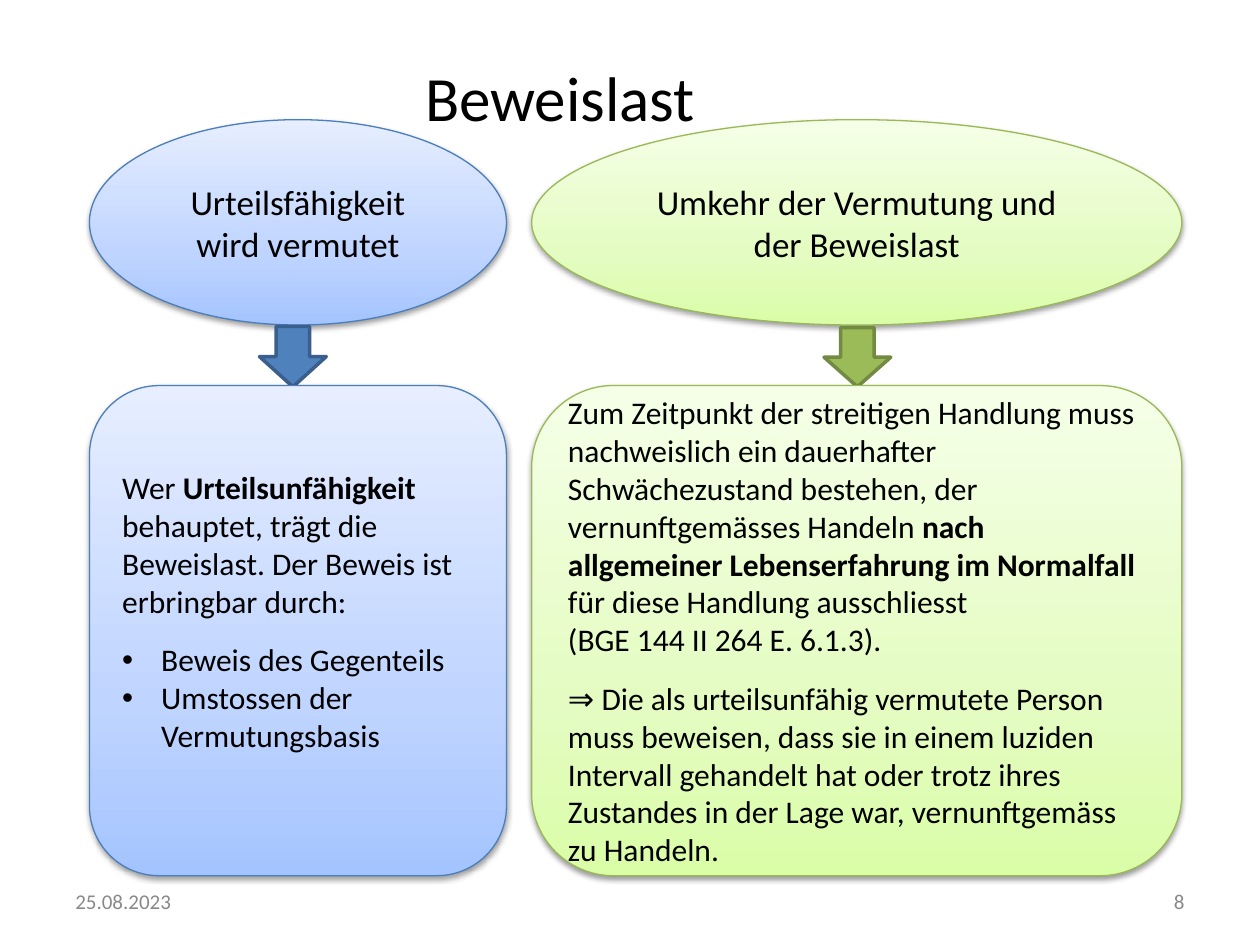
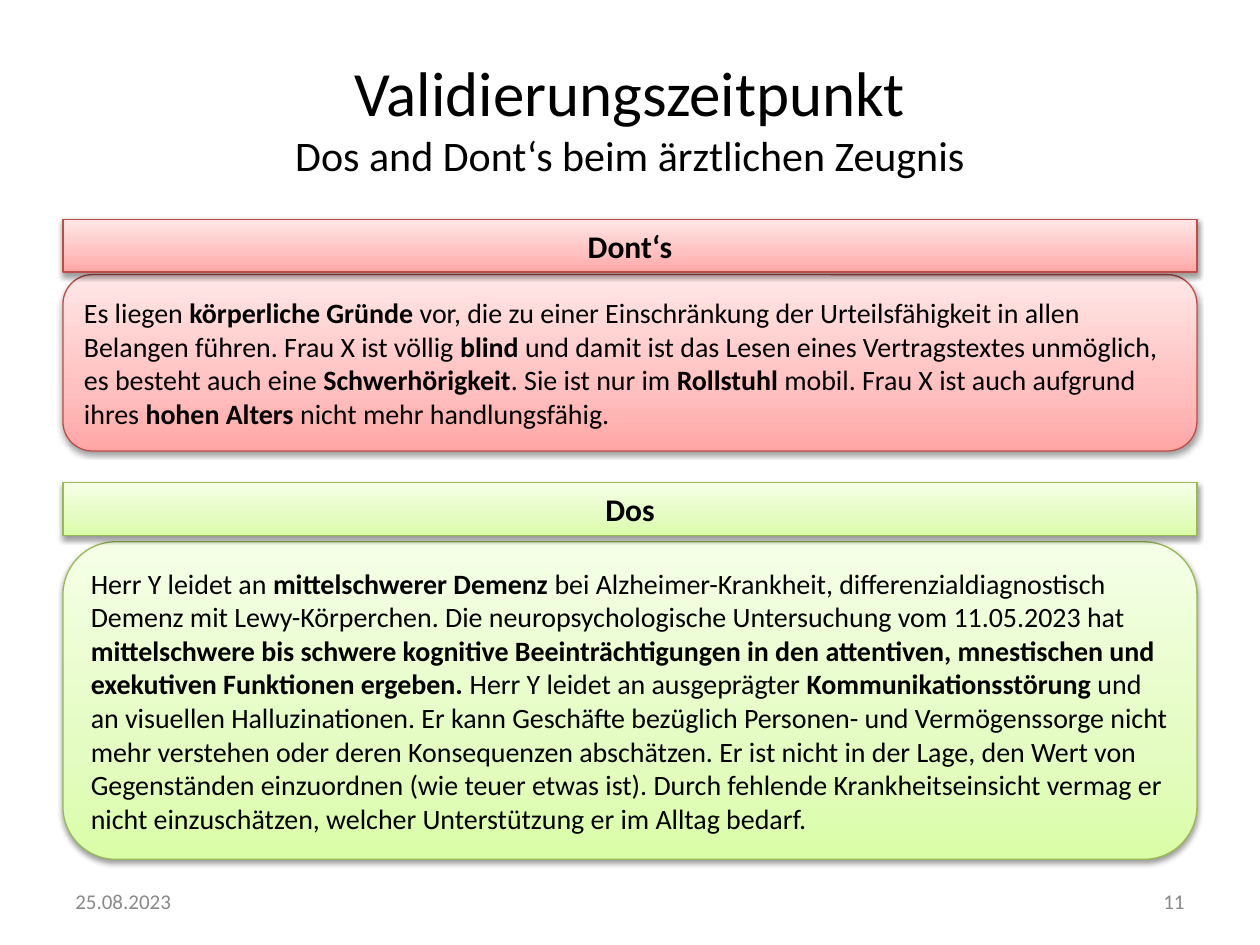
from lxml import etree
from pptx import Presentation
from pptx.dml.color import RGBColor
from pptx.enum import shapes, text
from pptx.oxml import ns
from pptx.util import Inches, Pt

SHAPE = shapes.MSO_SHAPE
ALIGN = text.PP_ALIGN
FONT = "Calibri"
BLACK, GREY = "000000", "898989"

# Each theme: panel gradient from bottom to top, then panel outline
BLUE = (("A4C4FF", "BFD4FF", "E6EEFF"), "4B7EBC")
GREEN = (("DAFDA7", "E4FCC2", "F5FFE7"), "98B955")
RED = (("FFA6A5", "FFC0BF", "FFE7E7"), "BF4C48")
STOPS = (0, 35, 100)


def rgb(value):
    return RGBColor.from_string(value)


def sub(parent, tag, **attrs):
    return etree.SubElement(parent, ns.qn(tag), attrs)


class Deck:
    def __init__(self):
        self.prs = Presentation()
        self.prs.slide_width, self.prs.slide_height = Inches(10), Inches(7.5)
        self.slide = None

    def new_slide(self, number, title, width, height, subtitle=None):
        self.slide = self.prs.slides.add_slide(self.prs.slide_layouts[5])
        sp = self.slide.shapes.title
        sp.left, sp.top = Inches(0.5), Inches(0.3)
        sp.width, sp.height = Inches(width), Inches(height)
        tf = sp.text_frame
        tf.vertical_anchor = text.MSO_ANCHOR.MIDDLE
        p = tf.paragraphs[0]
        p.alignment = ALIGN.CENTER
        self.run(p, title, 36)
        if subtitle:
            p.add_line_break()
            self.run(p, subtitle, 24)
        self.footer(0.5, "25.08.2023", ALIGN.LEFT)
        self.footer(7.17, str(number), ALIGN.RIGHT)

    def footer(self, left, content, align):
        sp = self.slide.shapes.add_textbox(
            Inches(left), Inches(6.95), Inches(2.33), Inches(0.4))
        self.frame(sp)
        self.paragraph(sp, content, 12, align, color=GREY)

    def run(self, p, content, size, bold=False, color=BLACK):
        r = p.add_run()
        r.text = content
        r.font.name, r.font.size, r.font.bold = FONT, Pt(size), bold
        r.font.color.rgb = rgb(color)

    def frame(self, sp):
        sp.text_frame.word_wrap = True
        sp.text_frame.vertical_anchor = text.MSO_ANCHOR.MIDDLE

    def paragraph(self, sp, content, size, align=ALIGN.LEFT, before=0,
                  bullet=False, color=BLACK):
        """Add a paragraph; ** toggles bold and a newline breaks the line."""
        tf = sp.text_frame
        p = tf.paragraphs[0] if not tf.text else tf.add_paragraph()
        p.alignment = align
        if before:
            p.space_before = Pt(before)
        if bullet:
            pPr = p._p.get_or_add_pPr()
            pPr.set("marL", str(Inches(0.31)))
            pPr.set("indent", str(-Inches(0.31)))
            sub(pPr, "a:buFont", typeface="Arial")
            sub(pPr, "a:buChar", char="•")
        for i, part in enumerate(content.split("**")):
            for j, line in enumerate(part.split("\n")):
                if j:
                    p.add_line_break()
                if line:
                    self.run(p, line, size, bold=i % 2 == 1, color=color)

    def shape(self, kind, left, top, width, height, line, weight):
        sp = self.slide.shapes.add_shape(
            kind, Inches(left), Inches(top), Inches(width), Inches(height))
        sp.shadow.inherit = False
        sp.line.color.rgb, sp.line.width = rgb(line), Pt(weight)
        return sp

    def panel(self, kind, left, top, width, height, theme):
        """Gradient shape with a soft shadow, ready for text."""
        colors, line = theme
        sp = self.shape(kind, left, top, width, height, line, 0.75)
        sp.fill.gradient()
        sp.fill.gradient_angle = 90
        spPr = sp._element.spPr
        stops = spPr.find(".//" + ns.qn("a:gsLst"))
        for gs in list(stops):
            stops.remove(gs)
        for pos, color in zip(STOPS, colors):
            gs = sub(stops, "a:gs", pos=str(pos * 1000))
            sub(gs, "a:srgbClr", val=color)
        shadow = sub(spPr.find(ns.qn("a:effectLst")), "a:outerShdw",
                     blurRad="40000", dist="20000", dir="5400000",
                     rotWithShape="0")
        sub(sub(shadow, "a:srgbClr", val=BLACK), "a:alpha", val="38000")
        self.frame(sp)
        return sp

    def arrow(self, left, top, height, fill, line):
        sp = self.shape(SHAPE.DOWN_ARROW, left, top, 0.53, height, line, 2)
        sp.fill.solid()
        sp.fill.fore_color.rgb = rgb(fill)


def burden_of_proof(deck):
    deck.new_slide(8, "Beweislast", 7.89, 0.93)

    # Presumptions, with an arrow down to each consequence
    columns = ((0.71, 3.31, BLUE, "Urteilsfähigkeit wird vermutet"),
               (4.22, 5.16, GREEN, "Umkehr der Vermutung und der Beweislast"))
    for left, width, theme, heading in columns:
        sp = deck.panel(SHAPE.OVAL, left, 0.95, width, 1.63, theme)
        deck.paragraph(sp, heading, 20, ALIGN.CENTER)
    deck.arrow(2.06, 2.59, 0.48, "4F81BD", "3A5F8C")
    deck.arrow(6.54, 2.6, 0.47, "9BBB59", "738A42")

    # Consequences
    proof, reversal = [
        deck.panel(SHAPE.ROUNDED_RECTANGLE, left, 3.06, width, 3.89, theme)
        for left, width, theme, _ in columns]
    proof.text_frame.margin_bottom = Inches(0.36)
    deck.paragraph(proof, "Wer **Urteilsunfähigkeit** behauptet, trägt die "
                   "Beweislast. Der Beweis ist erbringbar durch:", 18)
    deck.paragraph(proof, "Beweis des Gegenteils", 18, before=12, bullet=True)
    deck.paragraph(proof, "Umstossen der Vermutungsbasis", 18, bullet=True)
    deck.paragraph(
        reversal,
        "Zum Zeitpunkt der streitigen Handlung muss nachweislich ein "
        "dauerhafter Schwächezustand bestehen, der vernunftgemässes Handeln "
        "**nach allgemeiner Lebenserfahrung im Normalfall** für diese "
        "Handlung ausschliesst\n(BGE 144 II 264 E. 6.1.3).", 18)
    deck.paragraph(
        reversal,
        "⇒ Die als urteilsunfähig vermutete Person muss beweisen, dass sie "
        "in einem luziden Intervall gehandelt hat oder trotz ihres Zustandes "
        "in der Lage war, vernunftgemäss zu Handeln.", 18, before=12)


def validation_time(deck):
    deck.new_slide(11, "Validierungszeitpunkt", 9, 1.25,
                   "Dos and Dont‘s beim ärztlichen Zeugnis")

    # Heading bar and example for each case
    cases = (
        ("Dont‘s", RED, 1.74, 2.18, 1.4,
         "Es liegen **körperliche Gründe **vor, die zu einer Einschränkung "
         "der Urteilsfähigkeit in allen Belangen führen. Frau X ist völlig "
         "**blind** und damit ist das Lesen eines Vertragstextes unmöglich, "
         "es besteht auch eine **Schwerhörigkeit**. Sie ist nur im "
         "**Rollstuhl** mobil. Frau X ist auch aufgrund ihres "
         "**hohen Alters** nicht mehr handlungsfähig."),
        ("Dos", GREEN, 3.83, 4.3, 2.52,
         "Herr Y leidet an **mittelschwerer Demenz **bei Alzheimer-Krankheit, "
         "differenzialdiagnostisch Demenz mit Lewy-Körperchen. Die "
         "neuropsychologische Untersuchung vom 11.05.2023 hat "
         "**mittelschwere bis schwere kognitive Beeinträchtigungen in den "
         "attentiven, mnestischen und exekutiven Funktionen ergeben. **"
         "Herr Y leidet an ausgeprägter **Kommunikationsstörung** und an "
         "visuellen Halluzinationen. Er kann Geschäfte bezüglich Personen- "
         "und Vermögenssorge nicht mehr verstehen oder deren Konsequenzen "
         "abschätzen. Er ist nicht in der Lage, den Wert von Gegenständen "
         "einzuordnen (wie teuer etwas ist). Durch fehlende "
         "Krankheitseinsicht vermag er nicht einzuschätzen, welcher "
         "Unterstützung er im Alltag bedarf."),
    )
    for heading, theme, bar_top, top, height, example in cases:
        sp = deck.panel(SHAPE.ROUNDED_RECTANGLE, 0.5, top, 9, height, theme)
        deck.paragraph(sp, example, 16)
        sp = deck.panel(SHAPE.RECTANGLE, 0.5, bar_top, 9, 0.42, theme)
        deck.paragraph(sp, f"**{heading}**", 18, ALIGN.CENTER)


def main():
    deck = Deck()
    burden_of_proof(deck)
    validation_time(deck)
    deck.prs.save("out.pptx")


if __name__ == "__main__":
    main()
